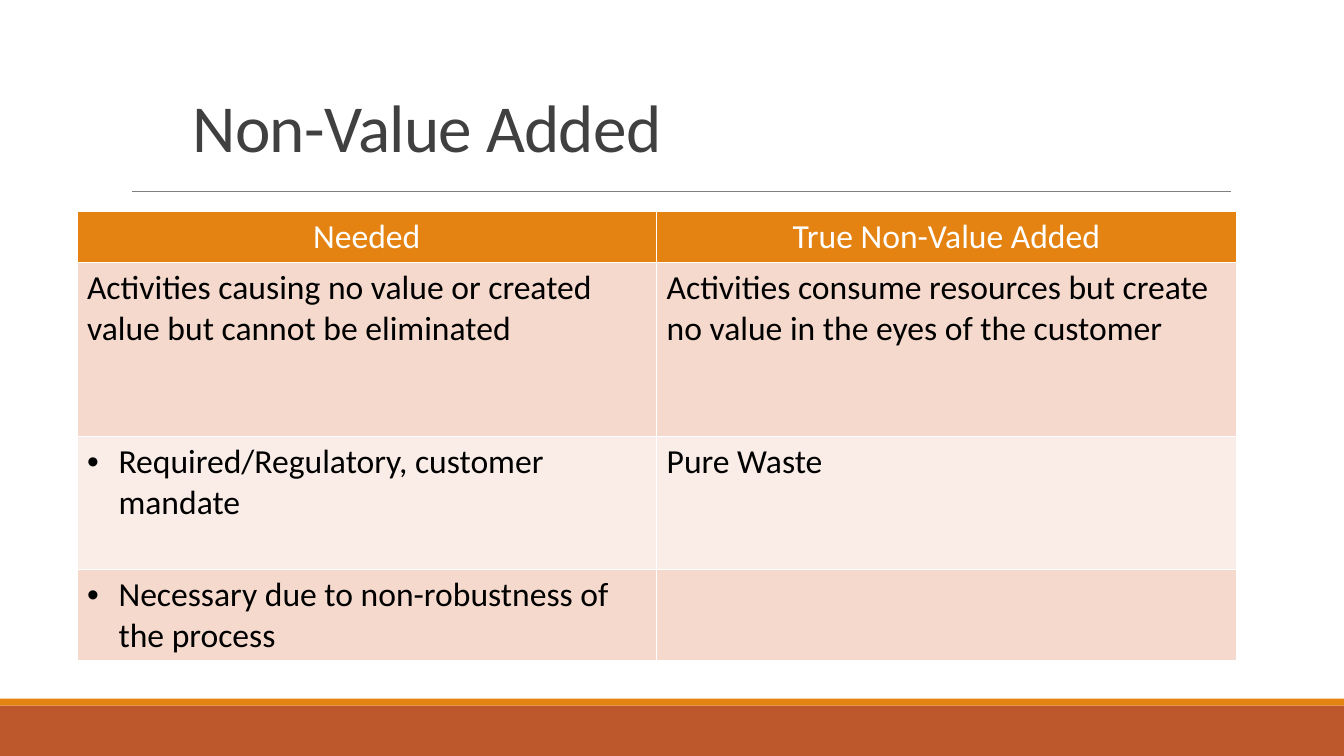
import pptx
import pptx.dml.color
import pptx.enum.shapes
import pptx.enum.text
import pptx.oxml.ns
import pptx.util
from lxml import etree

Pt = pptx.util.Pt
RGBColor = pptx.dml.color.RGBColor
PP_ALIGN = pptx.enum.text.PP_ALIGN
MSO_ANCHOR = pptx.enum.text.MSO_ANCHOR
qn = pptx.oxml.ns.qn

ORANGE = RGBColor(0xE4, 0x83, 0x12)
RUST = RGBColor(0xBD, 0x58, 0x2C)
PEACH = RGBColor(0xF5, 0xD9, 0xCC)
PALE_PEACH = RGBColor(0xFA, 0xED, 0xE7)
GREY = RGBColor(0x80, 0x80, 0x80)
DARK_GREY = RGBColor(0x40, 0x40, 0x40)
WHITE = RGBColor(0xFF, 0xFF, 0xFF)
BLACK = RGBColor(0, 0, 0)

ROWS = [
    ("Needed", "True Non-Value Added"),
    ("Activities causing no value or created value but cannot be eliminated",
     "Activities consume resources but create no value in the eyes of the customer"),
    ("Required/Regulatory, customer mandate", "Pure Waste"),
    ("Necessary due to non-robustness of the process", ""),
]
ROW_HEIGHTS = [36, 124.5, 95, 65]
ROW_FILLS = [ORANGE, PEACH, PALE_PEACH, PEACH]
COLUMN_WIDTH = 414
BULLET_INDENT = 22.5


def write_text(tf, text, size=24, color=BLACK, align=PP_ALIGN.LEFT,
               line_spacing=None, tracking=None, bullet=False):
    p = tf.paragraphs[0]
    p.alignment = align
    if line_spacing:
        p.line_spacing = line_spacing
    r = p.add_run()
    r.text = text
    r.font.name = "Calibri"
    r.font.size = Pt(size)
    r.font.bold = False
    r.font.color.rgb = color
    if tracking:
        r._r.get_or_add_rPr().set("spc", str(round(tracking * 100)))
    if bullet:
        pPr = p._p.get_or_add_pPr()
        pPr.set("marL", str(Pt(BULLET_INDENT)))
        pPr.set("indent", str(-Pt(BULLET_INDENT)))
        etree.SubElement(pPr, qn("a:buFont"), typeface="Arial")
        etree.SubElement(pPr, qn("a:buChar"), char="•")


def add_bar(slide, top, height, color):
    sp = slide.shapes.add_shape(pptx.enum.shapes.MSO_SHAPE.RECTANGLE,
                                Pt(0), Pt(top), Pt(960), Pt(height))
    sp.shadow.inherit = False
    sp.fill.solid()
    sp.fill.fore_color.rgb = color
    sp.line.fill.background()


def add_rule(slide, left, right, y):
    line = slide.shapes.add_connector(pptx.enum.shapes.MSO_CONNECTOR.STRAIGHT,
                                      Pt(left), Pt(y), Pt(right), Pt(y))
    line.line.color.rgb = GREY
    line.line.width = Pt(0.5)
    etree.SubElement(line._element.spPr, qn("a:effectLst"))


def add_title(slide, text):
    box = slide.shapes.add_textbox(Pt(130.5), Pt(28.8), Pt(737), Pt(93.6))
    tf = box.text_frame
    tf.word_wrap = True
    tf.vertical_anchor = MSO_ANCHOR.BOTTOM
    write_text(tf, text, size=48, color=DARK_GREY, line_spacing=0.85, tracking=-0.5)


def set_borders(cell, color, width):
    tcPr = cell._tc.get_or_add_tcPr()
    for side in ("a:lnL", "a:lnR", "a:lnT", "a:lnB"):
        ln = etree.SubElement(tcPr, qn(side), w=str(Pt(width)))
        fill = etree.SubElement(ln, qn("a:solidFill"))
        etree.SubElement(fill, qn("a:srgbClr"), val=str(color))


def add_comparison_table(slide):
    frame = slide.shapes.add_table(len(ROWS), 2, Pt(55), Pt(151.2),
                                   Pt(2 * COLUMN_WIDTH), Pt(sum(ROW_HEIGHTS)))
    table = frame.table
    table.first_row = False
    table.horz_banding = False
    for column in table.columns:
        column.width = Pt(COLUMN_WIDTH)
    for i, texts in enumerate(ROWS):
        table.rows[i].height = Pt(ROW_HEIGHTS[i])
        header = i == 0
        for j, text in enumerate(texts):
            cell = table.cell(i, j)
            set_borders(cell, WHITE, 1)
            cell.fill.solid()
            cell.fill.fore_color.rgb = ROW_FILLS[i]
            if text:
                write_text(cell.text_frame, text,
                           color=WHITE if header else BLACK,
                           align=PP_ALIGN.CENTER if header else PP_ALIGN.LEFT,
                           bullet=i >= 2 and j == 0)


def main():
    prs = pptx.Presentation()
    prs.slide_width = Pt(960)
    prs.slide_height = Pt(540)
    slide = prs.slides.add_slide(prs.slide_layouts[6])

    # Footer bars
    add_bar(slide, 504, 36, RUST)
    add_bar(slide, 499, 5, ORANGE)

    # Title and the rule below it
    add_rule(slide, 94.3, 879, 136.8)
    add_title(slide, "Non-Value Added")

    # Comparison of the two kinds of activity
    add_comparison_table(slide)

    prs.save("out.pptx")


if __name__ == "__main__":
    main()
